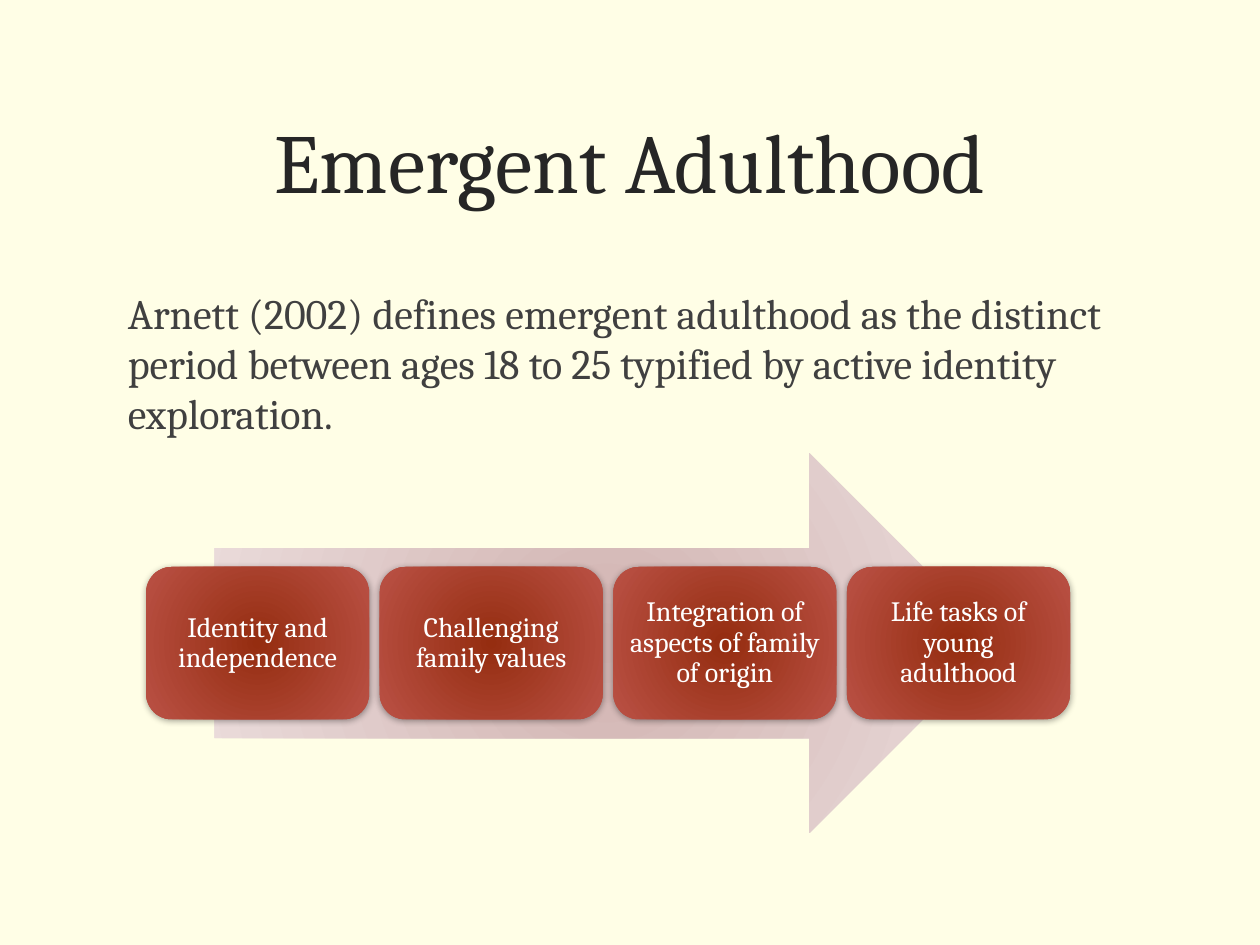
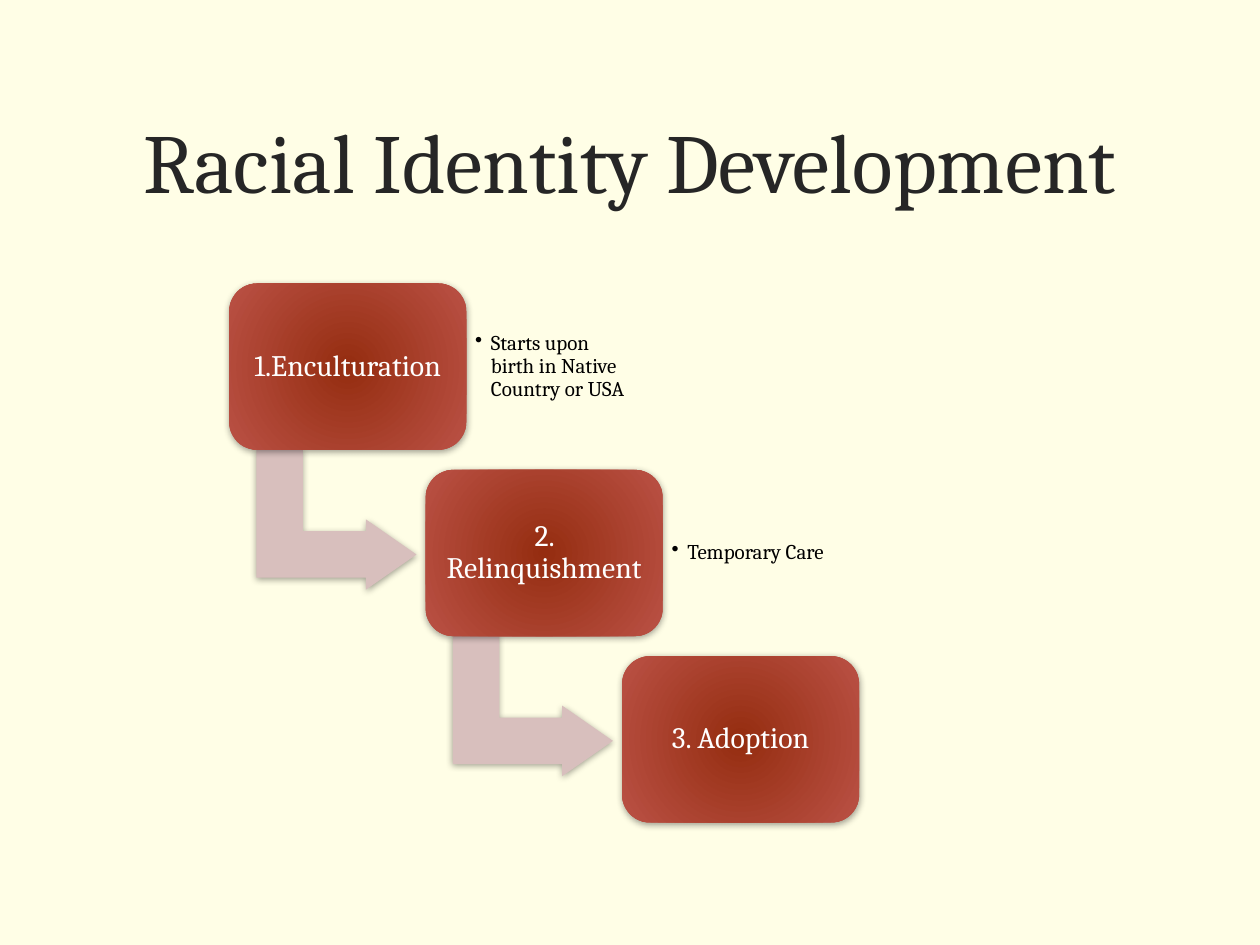
from dataclasses import dataclass

from lxml.etree import SubElement
from pptx import Presentation
from pptx.dml.color import RGBColor as Rgb
from pptx.enum.shapes import MSO_SHAPE as Shape
from pptx.enum.text import MSO_ANCHOR as Anchor, PP_ALIGN as Align
from pptx.oxml.ns import qn
from pptx.util import Pt

EMERGENT = {
    "title": "Emergent Adulthood",
    "definition": "Arnett (2002) defines emergent adulthood as the distinct period "
                  "between ages 18 to 25 typified by active identity exploration.",
    "tasks": [
        "Identity and independence",
        "Challenging family values",
        "Integration of aspects of family of origin",
        "Life tasks of young adulthood",
    ],
}
RACIAL = {
    "title": "Racial Identity Development",
    "stages": [
        ("1.Enculturation", "Starts upon birth in Native Country or USA"),
        ("2. Relinquishment", "Temporary Care"),
        ("3. Adoption", None),
    ],
}


@dataclass(frozen=True)
class Theme:
    font: str = "Cambria"
    background: str = "FFFEE6"
    title: str = "262626"
    body: str = "404040"
    note: str = "000000"
    box_text: str = "FFFFFF"
    box: tuple = ("952D10", "BA5145")
    big_arrow: tuple = ("D1B3B1", "EBDDDC")
    step_arrow: str = "D8BFBD"
    title_size: int = 48
    body_size: int = 24
    stage_size: int = 17
    task_size: int = 16
    note_size: int = 12


THEME = Theme()


def place(left, top, width, height):
    return Pt(left), Pt(top), Pt(width), Pt(height)


def write(shape, text, size, color, align=Align.LEFT, anchor=Anchor.TOP, inset=None, spacing=1.0):
    frame = shape.text_frame
    frame.word_wrap = True
    frame.vertical_anchor = anchor
    if inset is not None:
        frame.margin_left = frame.margin_right = Pt(inset)
        frame.margin_top = frame.margin_bottom = Pt(inset)
    frame.text = text
    para = frame.paragraphs[0]
    para.alignment = align
    para.line_spacing = spacing
    for span in para.runs:
        span.font.name = THEME.font
        span.font.size = Pt(size)
        span.font.color.rgb = Rgb.from_string(color)
    return para


def add_plain_shape(slide, kind, area, shadow=False):
    shape = slide.shapes.add_shape(kind, *place(*area))
    shape.line.fill.background()
    shape.shadow.inherit = False
    if shadow:
        effects = shape.element.spPr.find(qn("a:effectLst"))
        outer = SubElement(effects, qn("a:outerShdw"), blurRad=str(Pt(4)), dist=str(Pt(1)),
                           dir="5400000", rotWithShape="0")
        black = SubElement(outer, qn("a:srgbClr"), val="000000")
        SubElement(black, qn("a:alpha"), val="37000")
    return shape


def fill_radial(shape, colors):
    """Blend from the first colour at the centre to the second at the rim."""
    shape.fill.gradient()
    for stop, color in zip(shape.fill.gradient_stops, colors):
        stop.color.rgb = Rgb.from_string(color)
    gradient = shape.element.spPr.find(qn("a:gradFill"))
    gradient.remove(gradient.find(qn("a:lin")))
    circle = SubElement(gradient, qn("a:path"), path="circle")
    SubElement(circle, qn("a:fillToRect"), l="40000", t="100000", r="40000", b="100000")


def add_box(slide, area, text, size):
    box = add_plain_shape(slide, Shape.ROUNDED_RECTANGLE, area, shadow=True)
    fill_radial(box, THEME.box)
    write(box, text, size, THEME.box_text, Align.CENTER, Anchor.MIDDLE, inset=5, spacing=0.9)


def add_note(slide, area, text):
    note = slide.shapes.add_textbox(*place(*area))
    para = write(note, text, THEME.note_size, THEME.note,
                 anchor=Anchor.MIDDLE, inset=5, spacing=0.9)
    properties = para._p.get_or_add_pPr()
    properties.set("marL", str(Pt(9)))
    properties.set("indent", str(Pt(-9)))
    SubElement(properties, qn("a:buChar"), char="•")


def add_step_arrow(slide, area):
    arrow = add_plain_shape(slide, Shape.BENT_UP_ARROW, area, shadow=True)
    arrow.rotation = 90
    for index, value in enumerate((0.33, 0.25, 0.36)):
        arrow.adjustments[index] = value
    arrow.fill.solid()
    arrow.fill.fore_color.rgb = Rgb.from_string(THEME.step_arrow)


def add_titled_slide(deck, text):
    slide = deck.slides.add_slide(deck.slide_layouts[5])
    title = slide.shapes.title
    title.left, title.top, title.width, title.height = place(43.5, 34.5, 633, 114)
    write(title, text, THEME.title_size, THEME.title, Align.CENTER, Anchor.MIDDLE)
    return slide


def build_emergent(deck):
    slide = add_titled_slide(deck, EMERGENT["title"])
    definition = slide.shapes.add_textbox(*place(66, 160.5, 588, 109))
    write(definition, EMERGENT["definition"], THEME.body_size, THEME.body)

    arrow = add_plain_shape(slide, Shape.RIGHT_ARROW, (122.5, 259, 448.5, 217))
    fill_radial(arrow, THEME.big_arrow)

    left, top, width, height, gap = 83.5, 324, 127.5, 87, 6
    for index, task in enumerate(EMERGENT["tasks"]):
        area = (left + index * (width + gap), top, width, height)
        add_box(slide, area, task, THEME.task_size)


def build_racial(deck):
    slide = add_titled_slide(deck, RACIAL["title"])
    first_left, first_top, width, height = 131, 162, 135.5, 95
    step_right, step_down = 112.25, 106.5
    last = len(RACIAL["stages"]) - 1
    for index, (stage, note) in enumerate(RACIAL["stages"]):
        left = first_left + index * step_right
        top = first_top + index * step_down
        if index < last:
            add_step_arrow(slide, (left + 21, top + 89, 80.5, 91.5))
        add_box(slide, (left, top, width, height), stage, THEME.stage_size)
        if note:
            add_note(slide, (left + width, top + 9.5, 98.5, 76), note)


def main():
    deck = Presentation()
    deck.slide_width, deck.slide_height = Pt(720), Pt(540)
    background = deck.slide_master.background.fill
    background.solid()
    background.fore_color.rgb = Rgb.from_string(THEME.background)
    build_emergent(deck)
    build_racial(deck)
    deck.save("out.pptx")


if __name__ == "__main__":
    main()
